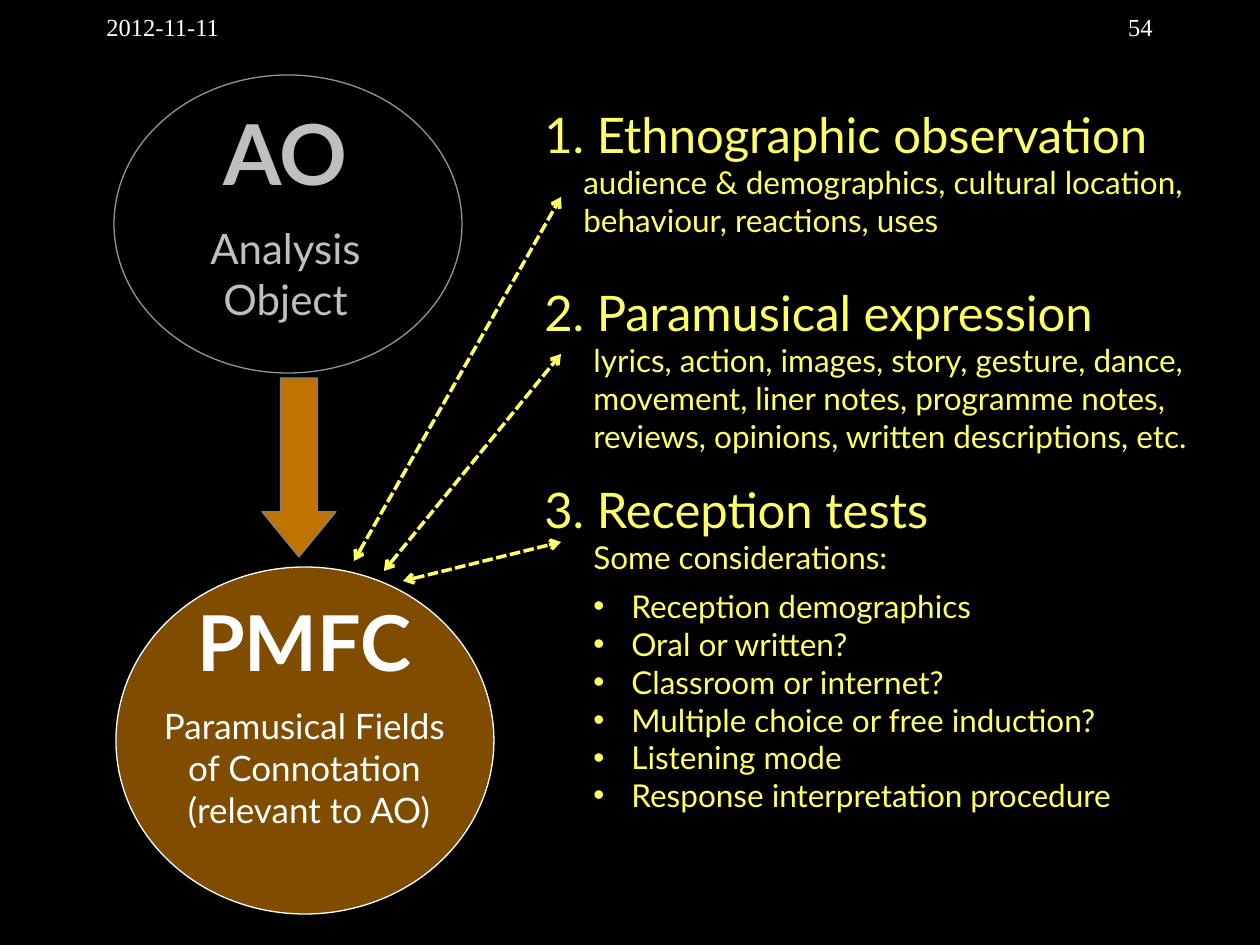
from pptx import Presentation
from pptx import util as u
from pptx.dml.color import RGBColor
from pptx.enum import dml, shapes, text
from pptx.oxml.ns import qn
from lxml import etree

SCALE = 914400 / 126
BLACK = RGBColor(0x00, 0x00, 0x00)
WHITE = RGBColor(0xFF, 0xFF, 0xFF)
YELLOW = RGBColor(0xFF, 0xFF, 0x66)
SILVER = RGBColor(0xBF, 0xBF, 0xBF)
RIM = RGBColor(0x94, 0x94, 0x94)
GREY = RGBColor(0x80, 0x80, 0x80)
BROWN = RGBColor(0x80, 0x4C, 0x00)
ORANGE = RGBColor(0xBF, 0x73, 0x00)
LEFT, CENTER, RIGHT = text.PP_ALIGN.LEFT, text.PP_ALIGN.CENTER, text.PP_ALIGN.RIGHT

# heading, heading top, detail, detail left, top, width and height
METHODS = [
    ("1. Ethnographic observation", 98,
     "audience & demographics, cultural location, behaviour, reactions, uses",
     571, 157, 640, 89),
    ("2. Paramusical expression", 276,
     "lyrics, action, images, story, gesture, dance, movement, liner notes, "
     "programme notes, reviews, opinions, written descriptions, etc.",
     581, 335, 650, 127),
    ("3. Reception tests", 473, "Some considerations:", 581, 532, 393, 50),
]
TOPICS = [
    "Reception demographics",
    "Oral or written?",
    "Classroom or internet?",
    "Multiple choice or free induction?",
    "Listening mode",
    "Response interpretation procedure",
]
LINKS = [(354, 561, 561, 197), (384, 571, 561, 354), (403, 581, 561, 542)]


def px(n):
    return u.Emu(round(n * SCALE))


def add_bullet(para, indent):
    props = para._p.get_or_add_pPr()
    props.set("marL", str(px(indent)))
    props.set("indent", str(-px(indent)))
    etree.SubElement(props, qn("a:buFont")).set("typeface", "Arial")
    etree.SubElement(props, qn("a:buChar")).set("char", "•")


def write(para, words, size=18, color=YELLOW, font="Lato", bold=False,
          align=LEFT, before=0):
    para.text = words
    para.alignment = align
    para.space_before = u.Pt(before)
    for run in para.runs:
        run.font.name = font
        run.font.size = u.Pt(size)
        run.font.bold = bold
        run.font.color.rgb = color


def add_box(slide, x, y, w, h):
    frame = slide.shapes.add_textbox(px(x), px(y), px(w), px(h)).text_frame
    frame.word_wrap = True
    return frame


def add_label(slide, words, x, y, w, h, **style):
    write(add_box(slide, x, y, w, h).paragraphs[0], words, **style)


def add_shape(slide, kind, x, y, w, h, fill, line):
    shape = slide.shapes.add_shape(kind, px(x), px(y), px(w), px(h))
    shape.shadow.inherit = False
    shape.fill.solid()
    shape.fill.fore_color.rgb = fill
    shape.line.color.rgb = line
    shape.line.width = u.Pt(0.75)
    return shape


def add_caption(slide, name, detail, x, y, w, h, big, small, color):
    """Large bold name above its smaller explanation."""
    frame = add_box(slide, x, y, w, h)
    write(frame.paragraphs[0], name, size=big, color=color, bold=True, align=CENTER)
    write(frame.add_paragraph(), detail, size=small, color=color, align=CENTER,
          before=small / 2)


def add_link(slide, x1, y1, x2, y2):
    """Dashed line with an arrowhead at both ends."""
    link = slide.shapes.add_connector(
        shapes.MSO_CONNECTOR.STRAIGHT, px(x1), px(y1), px(x2), px(y2))
    link.line.color.rgb = YELLOW
    link.line.width = u.Pt(2)
    link.line.dash_style = dml.MSO_LINE.SQUARE_DOT
    props = link._element.spPr
    for end in ("a:headEnd", "a:tailEnd"):
        etree.SubElement(props.find(qn("a:ln")), qn(end)).set("type", "arrow")
    etree.SubElement(props, qn("a:effectLst"))


def add_topics(slide):
    frame = add_box(slide, 581, 581, 571, 242)
    for i, topic in enumerate(TOPICS):
        para = frame.add_paragraph() if i else frame.paragraphs[0]
        write(para, topic)
        add_bullet(para, 38)


def main():
    deck = Presentation()
    deck.slide_width, deck.slide_height = px(1260), px(945)
    slide = deck.slides.add_slide(deck.slide_layouts[6])
    slide.background.fill.solid()
    slide.background.fill.fore_color.rgb = BLACK

    kind = shapes.MSO_SHAPE
    add_shape(slide, kind.OVAL, 116, 567, 378, 347, BROWN, WHITE)
    add_caption(slide, "PMFC", "Paramusical Fields\vof Connotation\v (relevant to AO)",
                84, 588, 441, 255, 44, 20, WHITE)
    add_shape(slide, kind.OVAL, 114, 75, 348, 298, BLACK, RIM)
    add_caption(slide, "AO", "Analysis\vObject", 144, 95, 283, 249, 48, 24, SILVER)
    arrow = add_shape(slide, kind.DOWN_ARROW, 262, 378, 74, 179, ORANGE, GREY)
    arrow.adjustments[0] = 0.5
    arrow.adjustments[1] = 0.61

    for head, top, detail, x, y, w, h in METHODS:
        add_label(slide, head, 532, top, 728, 72, size=28)
        add_label(slide, detail, x, y, w, h)
    add_topics(slide)
    for ends in LINKS:
        add_link(slide, *ends)

    for words, x, align in (("2012-11-11", 94, LEFT), ("54", 903, RIGHT)):
        add_label(slide, words, x, 6, 262, 63, size=14, color=WHITE,
                  font="Times New Roman", align=align)
    deck.save("out.pptx")


if __name__ == "__main__":
    main()
